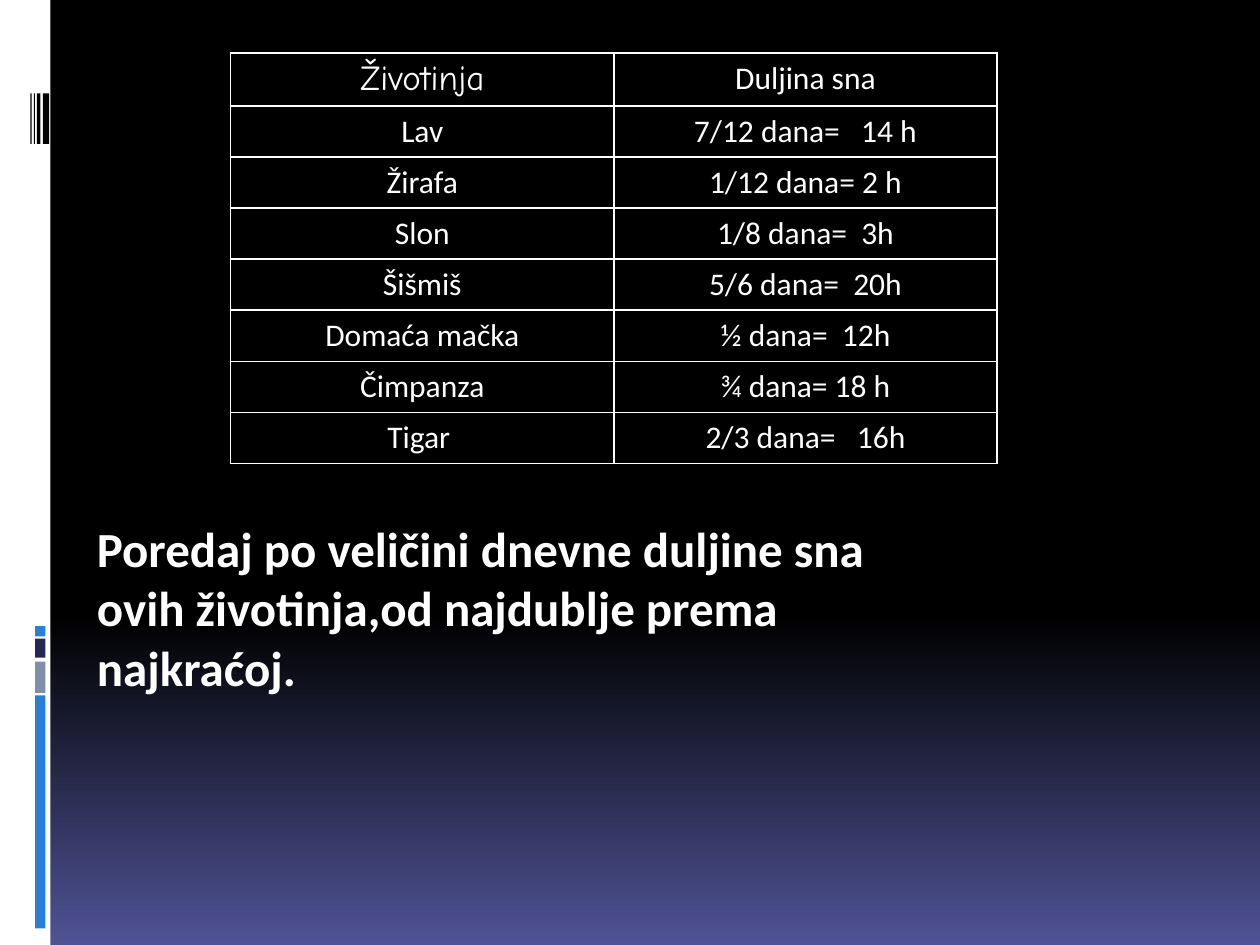
import pptx
import pptx.dml.color
import pptx.enum.shapes
import pptx.enum.text
import pptx.oxml
import pptx.oxml.ns
import pptx.util
from dataclasses import dataclass

Pt = pptx.util.Pt
RGB = pptx.dml.color.RGBColor.from_string


@dataclass(frozen=True)
class Theme:
    white: str = "FFFFFF"
    black: str = "000000"
    indigo: str = "4F5395"
    blue: str = "297FD5"
    grey: str = "7F8FA9"
    navy: str = "242852"
    font: str = "Calibri"
    title_font: str = "Comic Neue"
    cell_size: float = 18
    title_size: float = 20
    task_size: float = 28
    border: float = 1


THEME = Theme()
PLAIN_TABLE_STYLE = "{2D5ABB26-0587-4C30-8999-92F81FD0307C}"

SLEEP_ROWS = [
    ("Životinja", "Duljina sna"),
    ("Lav", "7/12 dana=   14 h"),
    ("Žirafa", "1/12 dana= 2 h"),
    ("Slon", "1/8 dana=  3h"),
    ("Šišmiš", "5/6 dana=  20h"),
    ("Domaća mačka", "½ dana=  12h"),
    ("Čimpanza", "¾ dana= 18 h"),
    ("Tigar ", "2/3 dana=   16h"),
]
TASK = ("Poredaj po veličini dnevne duljine sna ovih životinja,"
        "od najdublje prema najkraćoj.")


def paint_background(slide):
    fill = slide.background.fill
    fill.gradient()
    fill.gradient_angle = 270
    for stop, position, color in zip(fill.gradient_stops, (0.65, 1),
                                     (THEME.black, THEME.indigo)):
        stop.position = position
        stop.color.rgb = RGB(color)


def add_bar(slide, left, top, width, height, color):
    shape = slide.shapes.add_shape(
        pptx.enum.shapes.MSO_SHAPE.RECTANGLE,
        Pt(left), Pt(top), Pt(width), Pt(height))
    shape.shadow.inherit = False
    shape.fill.solid()
    shape.fill.fore_color.rgb = RGB(color)
    shape.line.fill.background()


def add_side_strip(slide, left, top, width, height):
    """White strip with a column of coloured blocks and a barcode."""
    add_bar(slide, left, top, width, height, THEME.white)
    blocks = [(397.4, 133.2, THEME.blue), (378, 18, THEME.grey),
              (365, 10.8, THEME.navy), (357.8, 5.8, THEME.blue)]
    for offset, block_height, color in blocks:
        add_bar(slide, left + 20.1, top + offset, 5.8, block_height, color)
    for offset, bar_width in [(24.5, 3.6), (21.1, 2), (19.3, 0.7), (17.4, 0.7)]:
        add_bar(slide, left + offset, top + 53.4, bar_width, 28.8, THEME.black)


def add_plain_table(slide, rows, columns, left, top, width, height):
    frame = slide.shapes.add_table(
        rows, columns, Pt(left), Pt(top), Pt(width), Pt(height))
    table = frame.table
    table.first_row = table.horz_banding = False
    properties = table._tbl.tblPr
    properties.find(pptx.oxml.ns.qn("a:tableStyleId")).text = PLAIN_TABLE_STYLE
    return table


def write_cell(cell, text, size, font=THEME.font, bold=False):
    cell.fill.background()
    cell.text = text
    paragraph = cell.text_frame.paragraphs[0]
    paragraph.font.name = font
    paragraph.font.size = Pt(size)
    paragraph.font.bold = bold
    paragraph.font.color.rgb = RGB(THEME.white)
    return paragraph


def add_borders(cell):
    properties = cell._tc.get_or_add_tcPr()
    for index, side in enumerate(("lnL", "lnR", "lnT", "lnB")):
        properties.insert(index, pptx.oxml.parse_xml(
            f'<a:{side} {pptx.oxml.ns.nsdecls("a")} w="{Pt(THEME.border)}">'
            f'<a:solidFill><a:srgbClr val="{THEME.white}"/></a:solidFill>'
            f'</a:{side}>'))


def add_sleep_table(slide, left, top, width, height):
    header_height = 30.2
    table = add_plain_table(slide, len(SLEEP_ROWS), 2, left, top, width, height)
    body_height = (height - header_height) / (len(SLEEP_ROWS) - 1)
    for row_index, texts in enumerate(SLEEP_ROWS):
        table.rows[row_index].height = Pt(body_height if row_index else header_height)
        for column_index, text in enumerate(texts):
            cell = table.cell(row_index, column_index)
            if row_index == column_index == 0:
                paragraph = write_cell(cell, text, THEME.title_size, THEME.title_font)
            else:
                paragraph = write_cell(cell, text, THEME.cell_size)
            paragraph.alignment = pptx.enum.text.PP_ALIGN.CENTER
            add_borders(cell)


def add_task(slide, left, top, width, height):
    table = add_plain_table(slide, 1, 1, left, top, width, height)
    write_cell(table.cell(0, 0), TASK, THEME.task_size, bold=True)


def main():
    presentation = pptx.Presentation()
    presentation.slide_width, presentation.slide_height = Pt(720), Pt(540)
    slide = presentation.slides.add_slide(presentation.slide_layouts[6])
    paint_background(slide)
    add_side_strip(slide, 0, 0, 28.8, 540)
    add_sleep_table(slide, 131.8, 30.2, 438, 234.6)
    add_task(slide, 48.2, 293.8, 480, 108)
    presentation.save("out.pptx")


if __name__ == "__main__":
    main()
